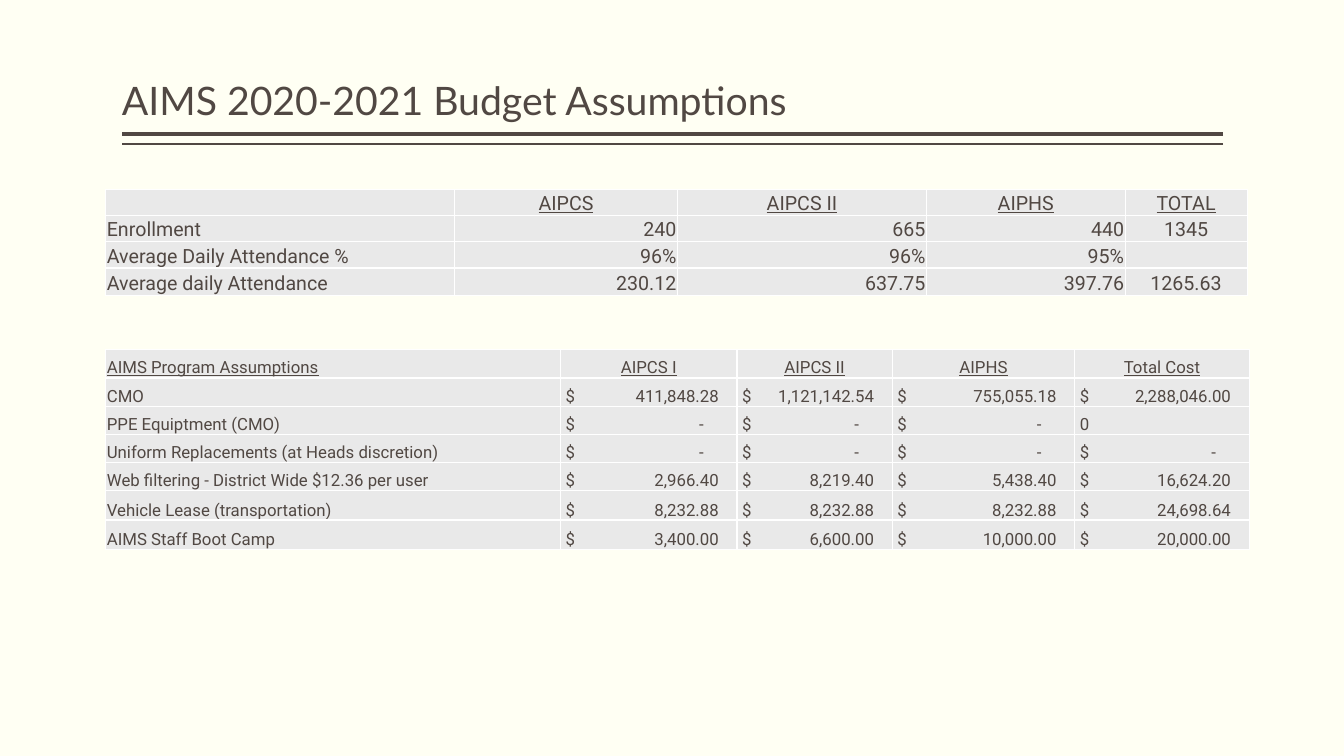
from lxml.etree import SubElement
from pptx import Presentation
from pptx.dml.color import RGBColor
from pptx.enum.shapes import MSO_CONNECTOR
from pptx.enum.text import MSO_ANCHOR, PP_ALIGN
from pptx.oxml.ns import qn
from pptx.util import Inches, Pt

BROWN, GRAY, WHITE, CREAM = "514843", "E9E9E9", "FFFFFF", "FFFFF3"
LEFT, CENTER, RIGHT = PP_ALIGN.LEFT, PP_ALIGN.CENTER, PP_ALIGN.RIGHT


def color(hex_string):
    return RGBColor.from_string(hex_string)


def add_budget_table(top, widths, heights, size, rows, alignments):
    frame = slide.shapes.add_table(len(rows), len(widths), Inches(1.05), Inches(top),
                                   Inches(sum(widths)), Inches(sum(heights)))
    table = frame.table
    table.first_row = table.horz_banding = False
    for column, width in zip(table.columns, widths):
        column.width = Inches(width)
    for row, height in zip(table.rows, heights):
        row.height = Inches(height)

    for row_index, values in enumerate(rows):
        for column_index, value in enumerate(values):
            cell = table.cell(row_index, column_index)
            is_header = row_index == 0
            cell.margin_left = cell.margin_right = cell.margin_top = Inches(0.01)
            cell.margin_bottom = 0
            cell.vertical_anchor = MSO_ANCHOR.BOTTOM

            # Thin white borders, then the fill
            properties = cell._tc.get_or_add_tcPr()
            for side in ("a:lnL", "a:lnR", "a:lnT", "a:lnB"):
                border = SubElement(properties, qn(side), w=str(Pt(1)))
                border_fill = SubElement(border, qn("a:solidFill"))
                SubElement(border_fill, qn("a:srgbClr"), val=WHITE)
            cell.fill.solid()
            cell.fill.fore_color.rgb = color(GRAY)

            paragraph = cell.text_frame.paragraphs[0]
            paragraph.text = value
            is_label = column_index == 0
            paragraph.alignment = (CENTER if is_header and not is_label
                                   else alignments[column_index])
            for run in paragraph.runs:
                run.font.name = "Roboto"
                run.font.size = Pt(size)
                run.font.underline = is_header
                run.font.color.rgb = color(BROWN)
            if not value:
                SubElement(paragraph._p, qn("a:endParaRPr"), sz=str(size * 100))

            # Dollar sign at the left, amount against a right tab stop
            if value.startswith(("$", "0")):
                cell.margin_left = Inches(0.05)
            if "\t" in value:
                stop = widths[column_index] - (0.38 if value.endswith("-") else 0.23)
                tabs = SubElement(paragraph._p.get_or_add_pPr(), qn("a:tabLst"))
                SubElement(tabs, qn("a:tab"), pos=str(Inches(stop)), algn="r")


presentation = Presentation()
presentation.slide_width = Inches(13.33)
presentation.slide_height = Inches(7.5)
slide = presentation.slides.add_slide(presentation.slide_layouts[6])
slide.background.fill.solid()
slide.background.fill.fore_color.rgb = color(CREAM)

# Double rule under the title
for y, weight in ((1.33, 3), (1.43, 1)):
    rule = slide.shapes.add_connector(MSO_CONNECTOR.STRAIGHT, Inches(12.13), Inches(y),
                                      Inches(1.21), Inches(y))
    rule.line.color.rgb = color(BROWN)
    rule.line.width = Pt(weight)
    SubElement(rule._element.spPr, qn("a:effectLst"))

# Title
title = slide.shapes.add_textbox(Inches(1.21), Inches(0.08), Inches(10.92), Inches(1.2))
title_frame = title.text_frame
title_frame.word_wrap = True
title_frame.vertical_anchor = MSO_ANCHOR.BOTTOM
title_frame.margin_left = title_frame.margin_right = 0
title_frame.text = "AIMS 2020-2021 Budget Assumptions"
paragraph = title_frame.paragraphs[0]
paragraph.line_spacing = 0.9
title_font = paragraph.runs[0].font
title_font.name = "Lato"
title_font.size = Pt(28)
title_font.color.rgb = color(BROWN)

# Enrollment table
enrollment_rows = [
    ("", "AIPCS", "AIPCS II", "AIPHS", "TOTAL"),
    ("Enrollment", "240", "665", "440", "1345"),
    ("Average Daily Attendance %", "96%", "96%", "95%", ""),
    ("Average daily Attendance", "230.12", "637.75", "397.76", "1265.63"),
]
add_budget_table(1.88, [3.46, 2.21, 2.47, 1.97, 1.21], [0.26] * 3 + [0.27], 14,
                 enrollment_rows, [LEFT, RIGHT, RIGHT, RIGHT, CENTER])

# Program cost table
program_costs = [
    ("CMO", "411,848.28", "1,121,142.54", "755,055.18", "2,288,046.00"),
    ("PPE Equiptment (CMO)", "-", "-", "-", "0"),
    ("Uniform Replacements (at Heads discretion)", "-", "-", "-", "-"),
    ("Web filtering - District Wide $12.36 per user",
     "2,966.40", "8,219.40", "5,438.40", "16,624.20"),
    ("Vehicle Lease (transportation)", "8,232.88", "8,232.88", "8,232.88", "24,698.64"),
    ("AIMS Staff Boot Camp", "3,400.00", "6,600.00", "10,000.00", "20,000.00"),
]
program_rows = [("AIMS Program Assumptions", "AIPCS I", "AIPCS II", "AIPHS", "Total Cost")]
for label, *amounts in program_costs:
    program_rows.append([label] + [amount if amount == "0" else f"$\t{amount}"
                                   for amount in amounts])
add_budget_table(3.47, [4.51, 1.75, 1.54, 1.81, 1.73], [0.28] * 5 + [0.29] * 2, 12,
                 program_rows, [LEFT] * 5)

presentation.save("out.pptx")
